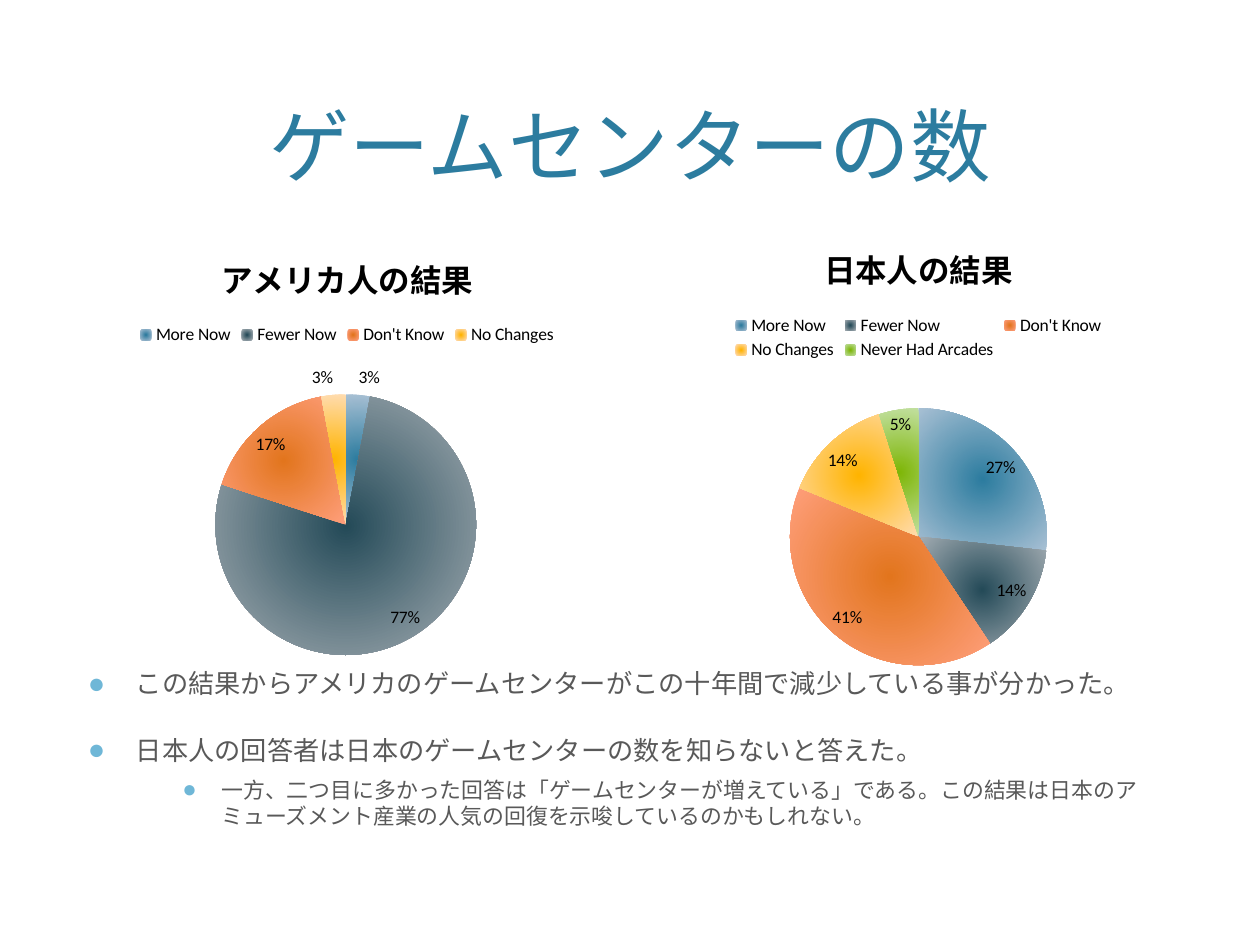
from lxml import etree
from pptx import Presentation
from pptx.chart.data import CategoryChartData
from pptx.dml.color import RGBColor
from pptx.enum.chart import XL_CHART_TYPE, XL_LABEL_POSITION, XL_LEGEND_POSITION
from pptx.enum.text import MSO_ANCHOR, PP_ALIGN
from pptx.oxml import parse_xml
from pptx.oxml.ns import nsdecls, qn
from pptx.util import Inches, Pt

PIE = XL_CHART_TYPE.PIE
BEST_FIT = XL_LABEL_POSITION.BEST_FIT
LEGEND_TOP = XL_LEGEND_POSITION.TOP
BOTTOM, CENTER = MSO_ANCHOR.BOTTOM, PP_ALIGN.CENTER
FONT = "Calibri"

# Content
TITLE = "ゲームセンターの数"
ANSWERS = ["More Now", "Fewer Now", "Don't Know", "No Changes", "Never Had Arcades"]
# Centre and rim colour of each answer's slice
SLICE_COLORS = [("2C7C9F", "A8C0D4"), ("244A58", "A5AEB4"), ("E2751D", "FF9F7C"),
                ("FFB400", "FFDCB0"), ("7EB606", "C2E0A0")]
# Frame is left, top, width, height; pie is left, top, diameter on the slide
SURVEYS = [
    {"title": "アメリカ人の結果", "values": [3, 77, 17, 3],
     "frame": (0.17, 1.83, 5.17, 3.5), "pie": (1.71, 3.13, 2.07)},
    {"title": "日本人の結果", "values": [27, 14, 41, 14, 5],
     "frame": (4.58, 1.75, 5.42, 3.67), "pie": (6.27, 3.24, 2.04)},
]
# Level, text
FINDINGS = [
    (0, "この結果からアメリカのゲームセンターがこの十年間で減少している事が分かった。"),
    (0, "日本人の回答者は日本のゲームセンターの数を知らないと答えた。"),
    (2, "一方、二つ目に多かった回答は「ゲームセンターが増えている」である。"
        "この結果は日本のアミューズメント産業の人気の回復を示唆しているのかもしれない。"),
]
LEVELS = {0: {"size": 15, "before": 20, "margin": 0.38, "hang": 0.38},
          2: {"size": 12.5, "before": 6, "margin": 1.06, "hang": 0.31}}


def style_font(font, size, color, bold=False):
    values = {"name": FONT, "size": Pt(size), "bold": bold}
    for key, value in values.items():
        setattr(font, key, value)
    font.color.rgb = RGBColor.from_string(color)


def place(shape, left, top, width, height):
    values = {"left": left, "top": top, "width": width, "height": height}
    for key, value in values.items():
        setattr(shape, key, Inches(value))


def add_bullet(paragraph, margin, hang):
    props = paragraph._p.get_or_add_pPr()
    props.set("marL", str(Inches(margin)))
    props.set("indent", str(-Inches(hang)))
    color = etree.SubElement(props, qn("a:buClr"))
    etree.SubElement(color, qn("a:srgbClr"), val="6FB7D7")
    etree.SubElement(props, qn("a:buSzPct"), val="110000")
    etree.SubElement(props, qn("a:buFont"), typeface="Arial")
    etree.SubElement(props, qn("a:buChar"), char="●")


def fill_radial(point, center, rim):
    fill = parse_xml(
        f'<a:gradFill {nsdecls("a")} rotWithShape="1"><a:gsLst>'
        f'<a:gs pos="0"><a:srgbClr val="{center}"/></a:gs>'
        f'<a:gs pos="100000"><a:srgbClr val="{rim}"/></a:gs></a:gsLst>'
        '<a:path path="circle"><a:fillToRect l="50000" t="50000" r="50000" b="50000"/>'
        '</a:path></a:gradFill>')
    point.format.line.fill.background()
    point.format._element.get_or_add_spPr().insert(0, fill)


def set_pie_area(chart, frame, pie):
    left, top, width, height = frame
    pie_left, pie_top, diameter = pie
    area = {"x": (pie_left - left) / width, "y": (pie_top - top) / height,
            "w": diameter / width, "h": diameter / height}
    plot_area = chart._chartSpace.chart.plotArea
    for old in plot_area.findall(qn("c:layout")):
        plot_area.remove(old)
    layout = etree.Element(qn("c:layout"))
    manual = etree.SubElement(layout, qn("c:manualLayout"))
    etree.SubElement(manual, qn("c:layoutTarget"), val="inner")
    for axis in "xy":
        etree.SubElement(manual, qn(f"c:{axis}Mode"), val="edge")
    for key, share in area.items():
        etree.SubElement(manual, qn(f"c:{key}"), val=str(share))
    plot_area.insert(0, layout)


def add_survey(slide, title, values, frame, pie):
    data = CategoryChartData()
    data.categories = ANSWERS[:len(values)]
    data.add_series("Series 1", values)
    chart = slide.shapes.add_chart(PIE, *map(Inches, frame), data).chart
    style_font(chart.font, 10, "000000")
    chart.has_title = True
    heading = chart.chart_title.text_frame
    heading.text = title
    style_font(heading.paragraphs[0].runs[0].font, 18, "000000", bold=True)
    chart.has_legend = True
    chart.legend.position = LEGEND_TOP
    chart.legend.include_in_layout = False

    plot = chart.plots[0]
    plot.vary_by_categories = True
    plot.has_data_labels = True
    labels = {"show_percentage": True, "show_value": False, "number_format": "0%",
              "number_format_is_linked": False, "position": BEST_FIT}
    for key, value in labels.items():
        setattr(plot.data_labels, key, value)
    for index, colors in enumerate(SLICE_COLORS[:len(values)]):
        fill_radial(plot.series[0].points[index], *colors)
    set_pie_area(chart, frame, pie)


prs = Presentation()
prs.slide_width, prs.slide_height = Inches(10), Inches(7.5)
slide = prs.slides.add_slide(prs.slide_layouts[5])

# Title
title = slide.shapes.title
place(title, 0.6, 0.12, 8.8, 1.46)
title.text_frame.text = TITLE
title.text_frame.vertical_anchor = BOTTOM
title.text_frame.paragraphs[0].alignment = CENTER
style_font(title.text_frame.paragraphs[0].runs[0].font, 46, "2C7C9F")

# Findings
findings = slide.shapes.add_textbox(*map(Inches, (0.6, 5.25, 8.8, 1.25))).text_frame
findings.word_wrap = True
for number, (level, text) in enumerate(FINDINGS):
    paragraph = findings.add_paragraph() if number else findings.paragraphs[0]
    look = LEVELS[level]
    paragraph.level = level
    paragraph.space_before = Pt(look["before"])
    add_bullet(paragraph, look["margin"], look["hang"])
    run = paragraph.add_run()
    run.text = text
    style_font(run.font, look["size"], "595959")

# Survey charts
for survey in SURVEYS:
    add_survey(slide, **survey)

prs.save("out.pptx")
